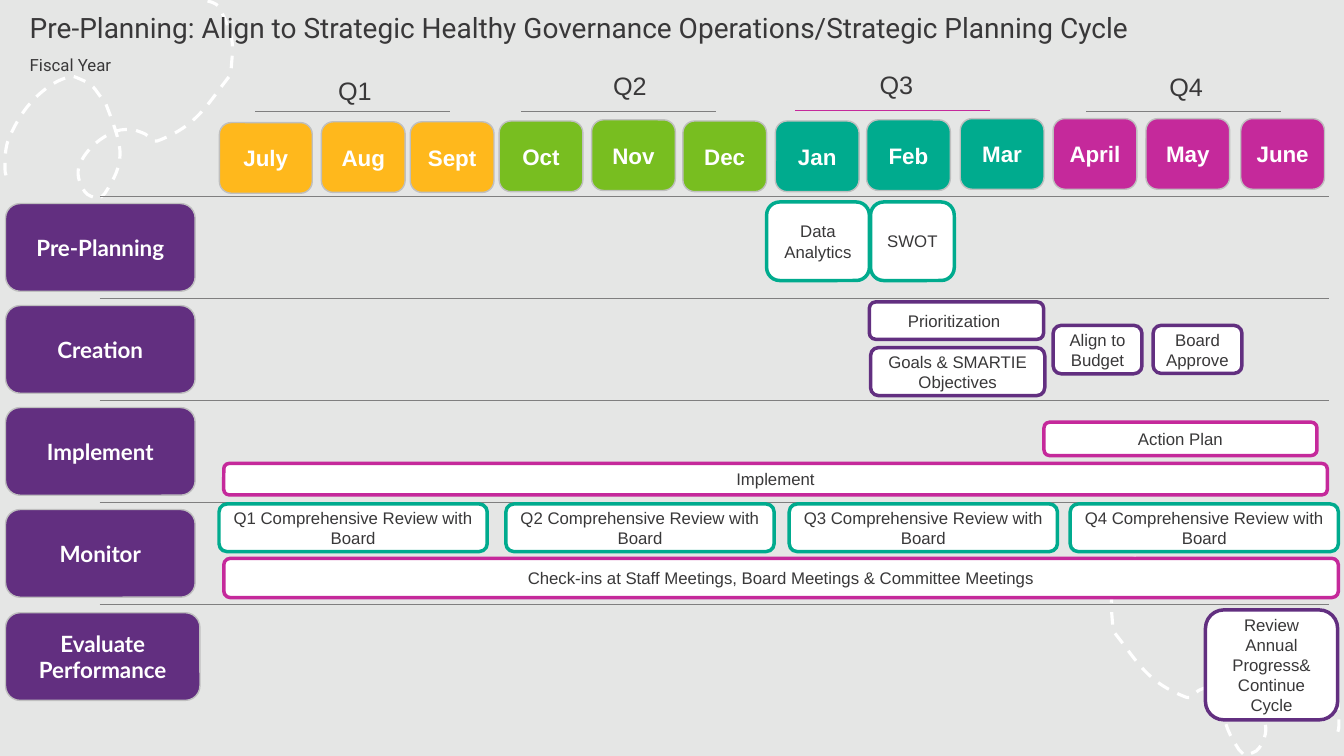
from lxml import etree
from pptx import Presentation
from pptx.dml.color import RGBColor
from pptx.enum.dml import MSO_LINE
from pptx.enum.shapes import MSO_CONNECTOR, MSO_SHAPE
from pptx.enum.text import MSO_ANCHOR, PP_ALIGN
from pptx.oxml.ns import qn
from pptx.util import Cm, Pt

ROUND, LINE, DASH = MSO_SHAPE.ROUNDED_RECTANGLE, MSO_CONNECTOR.STRAIGHT, MSO_LINE.DASH
MID, TOP, MIDDLE, LEFT = MSO_ANCHOR.MIDDLE, MSO_ANCHOR.TOP, PP_ALIGN.CENTER, PP_ALIGN.LEFT

HUES = {"back": "E5E6E5", "white": "FFFFFF", "text": "393839", "edge": "BFBFBF",
        "rule": "7F7F7F", "gold": "FFB81C", "green": "78BE20", "teal": "00AB8E",
        "pink": "C5299B", "plum": "622F80"}

# Content: all lengths in cm
TITLE = "Pre-Planning: Align to Strategic Healthy Governance Operations/Strategic Planning Cycle"
SUB = "Fiscal Year"

# Quarter: name, label place, rule start, rule colour, month colour, months
QUARTERS = [
    ("Q1", (8.27, 1.78), (6.43, 2.81), "rule", "gold",
     [("July", 5.53, 3.09, 2.34), ("Aug", 8.1, 3.07, 2.11), ("Sept", 10.34, 3.07, 2.11)]),
    ("Q2", (15.2, 1.65), (13.13, 2.81), "rule", "green",
     [("Oct", 12.58, 3.05, 2.11), ("Nov", 14.91, 3.02, 2.11), ("Dec", 17.21, 3.05, 2.11)]),
    ("Q3", (21.92, 1.63), (20.03, 2.78), "pink", "teal",
     [("Jan", 19.54, 3.05, 2.11), ("Feb", 21.84, 3.02, 2.11), ("Mar", 24.2, 2.99, 2.11)]),
    ("Q4", (29.22, 1.68), (27.37, 2.81), "rule", "pink",
     [("April", 26.54, 2.99, 2.11), ("May", 28.88, 2.99, 2.11), ("June", 31.27, 2.99, 2.11)]),
]

# Stage: name, top, width
STAGES = [("Pre-Planning", 5.13, 4.78), ("Creation", 7.7, 4.78), ("Implement", 10.27, 4.78),
          ("Monitor", 12.84, 4.78), ("Evaluate Performance", 15.44, 4.9)]

# Task: text, colour, left, top, width, height
TASKS = [
    ("Data Analytics", "teal", 19.32, 5.09, 2.59, 1.98),
    ("SWOT", "teal", 21.94, 5.09, 2.11, 1.98),
    ("Prioritization ", "plum", 21.91, 7.61, 4.39, 0.94),
    ("Goals & SMARTIE Objectives", "plum", 21.94, 8.76, 4.39, 1.21),
    ("Align to Budget", "plum", 26.54, 8.2, 2.24, 1.22),
    ("Board Approve", "plum", 29.06, 8.2, 2.24, 1.21),
    ("Action Plan", "pink", 26.31, 10.64, 6.88, 0.84),
    ("Implement", "pink", 5.64, 11.68, 27.81, 0.79),
    ("Check-ins at Staff Meetings, Board Meetings & Committee Meetings",
     "pink", 5.64, 14.07, 28.09, 0.99),
    ("Review Annual Progress& Continue Cycle", "plum", 30.38, 15.37, 3.33, 2.77),
]
REVIEW = "Comprehensive Review with Board"
REVIEWS = [5.52, 12.75, 19.89, 26.97]

# Dashed trail: start, then two controls and an end per curve, in 1/100 inch
TRAIL = [
    (6, 174), (6, 172), (4, 169), (5, 167), (5, 157), (5, 146), (9, 137),
    (19, 114), (32, 96), (53, 83), (59, 79), (65, 78), (70, 75),
    (72, 76), (75, 76), (76, 77), (95, 85), (91, 85), (105, 103),
    (110, 116), (118, 136), (119, 149), (120, 166), (113, 178), (104, 192),
    (102, 194), (100, 196), (98, 198), (93, 195), (87, 195), (84, 190),
    (80, 184), (76, 175), (78, 167), (82, 151), (100, 135), (116, 130),
    (121, 128), (126, 129), (131, 128), (136, 130), (140, 131), (144, 133),
    (148, 135), (152, 142), (156, 140), (196, 125), (205, 104), (229, 74),
    (231, 44), (234, 42), (220, 12), (217, 4), (213, 3), (206, 1),
]
UNIT = 0.0254
WIDE, HIGH, DROP = 33.87, 19.05, 14.02

# Formats
MONTH = {"size": Pt(16), "name": "Arial", "bold": True}
STAGE = {"size": Pt(16), "name": "Lato", "bold": True}
TASK = {"size": Pt(12), "name": "Arial", "bold": False}
QUARTER = {"size": Pt(18), "name": "Arial"}
HEAD = {"size": Pt(20), "name": "Roboto"}
NOTE = {"size": Pt(12), "name": "Roboto"}

deck = Presentation()
deck.slide_width, deck.slide_height = Cm(WIDE), Cm(HIGH)
slide = deck.slides.add_slide(deck.slide_layouts[6])
shapes = slide.shapes


def hue(key):
    return RGBColor.from_string(HUES[key])


def write(para, text, form, key):
    run = para.add_run()
    run.text = text
    for name, value in form.items():
        setattr(run.font, name, value)
    run.font.color.rgb = hue(key)


def frame(shape, anchor, align):
    body = shape.text_frame
    body.word_wrap, body.vertical_anchor = True, anchor
    body.paragraphs[0].alignment = align
    return body


def stroke(line, key, width):
    line.color.rgb, line.width = hue(key), Pt(width)


def card(text, area, fill, edge, width, form, ink):
    box = shapes.add_shape(ROUND, *map(Cm, area))
    box.shadow.inherit = False
    box.fill.solid()
    box.fill.fore_color.rgb = hue(fill)
    stroke(box.line, edge, width)
    write(frame(box, MID, MIDDLE).paragraphs[0], text, form, ink)


def rule(left, top, right, key, width):
    line = shapes.add_connector(LINE, Cm(left), Cm(top), Cm(right), Cm(top))
    stroke(line.line, key, width)
    etree.SubElement(line._element.spPr, qn("a:effectLst"))


def bend(shape):
    """Turn each three line segments into one cubic curve."""
    legs = list(shape._element.iter(qn("a:lnTo")))
    for k in range(0, len(legs), 3):
        curve = etree.Element(qn("a:cubicBezTo"))
        legs[k].addprevious(curve)
        for leg in legs[k:k + 3]:
            curve.append(leg[0])
            leg.getparent().remove(leg)


# Background
slide.background.fill.solid()
slide.background.fill.fore_color.rgb = hue("back")

# Trails: top left, and mirrored at bottom right
for flip in (False, True):
    dots = [(WIDE - x * UNIT, y * UNIT + DROP) if flip else (x * UNIT, y * UNIT)
            for x, y in TRAIL]
    dots = [(Cm(x), Cm(y)) for x, y in dots]
    pen = shapes.build_freeform(*dots[0])
    pen.add_line_segments(dots[1:], close=False)
    trail = pen.convert_to_shape()
    bend(trail)
    trail.shadow.inherit = False
    trail.fill.background()
    stroke(trail.line, "white", 2.25)
    trail.line.dash_style = DASH

# Heading
body = frame(shapes.add_textbox(Cm(0.5), Cm(0.13), Cm(33.25), Cm(1.96)), TOP, LEFT)
write(body.paragraphs[0], TITLE, HEAD, "text")
para = body.add_paragraph()
write(para, SUB, NOTE, "text")
write(para, " ", HEAD, "text")

# Stages with a rule above each
for i, (name, top, wide) in enumerate(STAGES):
    rule(2.51, 4.95 + 2.57 * i, 33.5, "rule", 1)
    card(name, (0.14, top, wide, 2.21), "plum", "edge", 1, STAGE, "white")

# Quarters, months and reviews
for (name, spot, start, ink, fill, months), left in zip(QUARTERS, REVIEWS):
    label = shapes.add_textbox(*map(Cm, (*spot, 1.45, 1.02)))
    write(frame(label, TOP, LEFT).paragraphs[0], name, QUARTER, "text")
    rule(*start, start[0] + 4.92, ink, 0.5)
    for month, x, y, wide in months:
        card(month, (x, y, wide, 1.78), fill, "edge", 1, MONTH, "white")
    card(f"{name} {REVIEW}", (left, 12.7, 6.76, 1.2), "white", "teal", 2.5, TASK, "text")

# Tasks
for text, key, *area in TASKS:
    card(text, area, "white", key, 2.5, TASK, "text")

deck.save("out.pptx")
